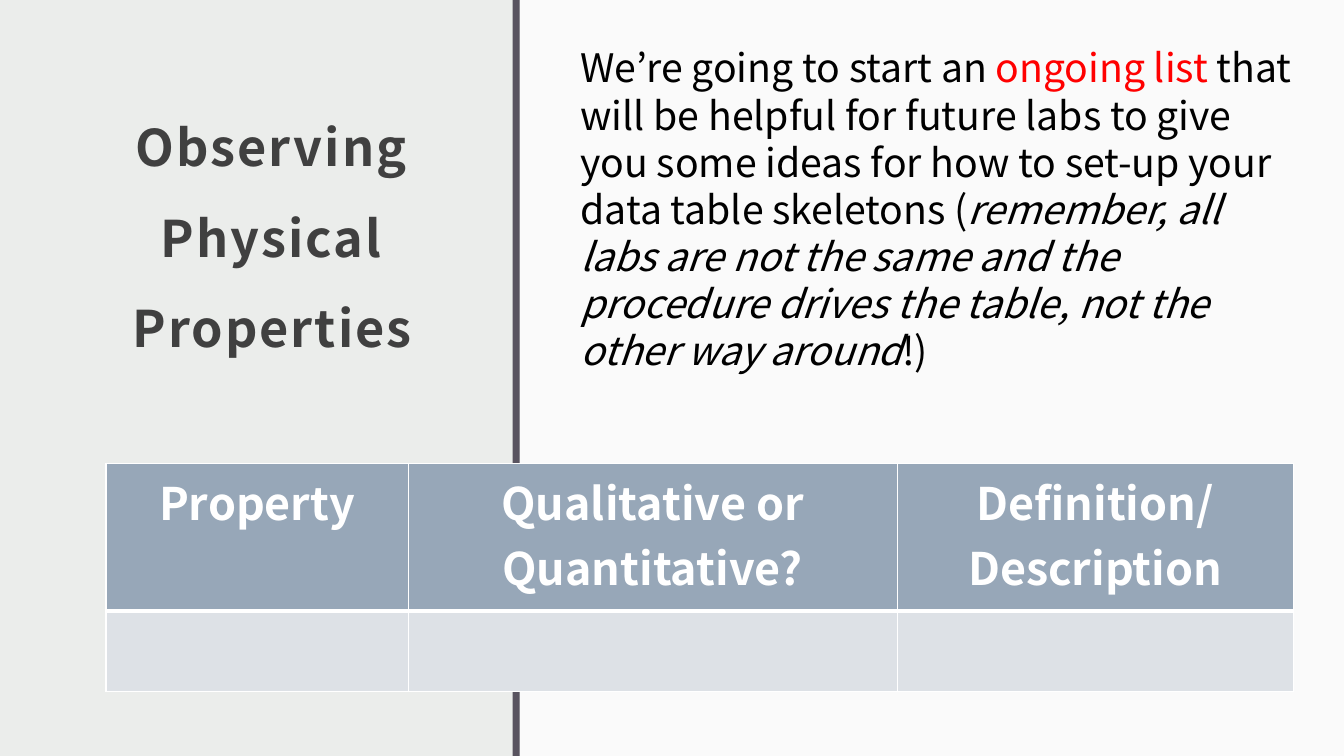
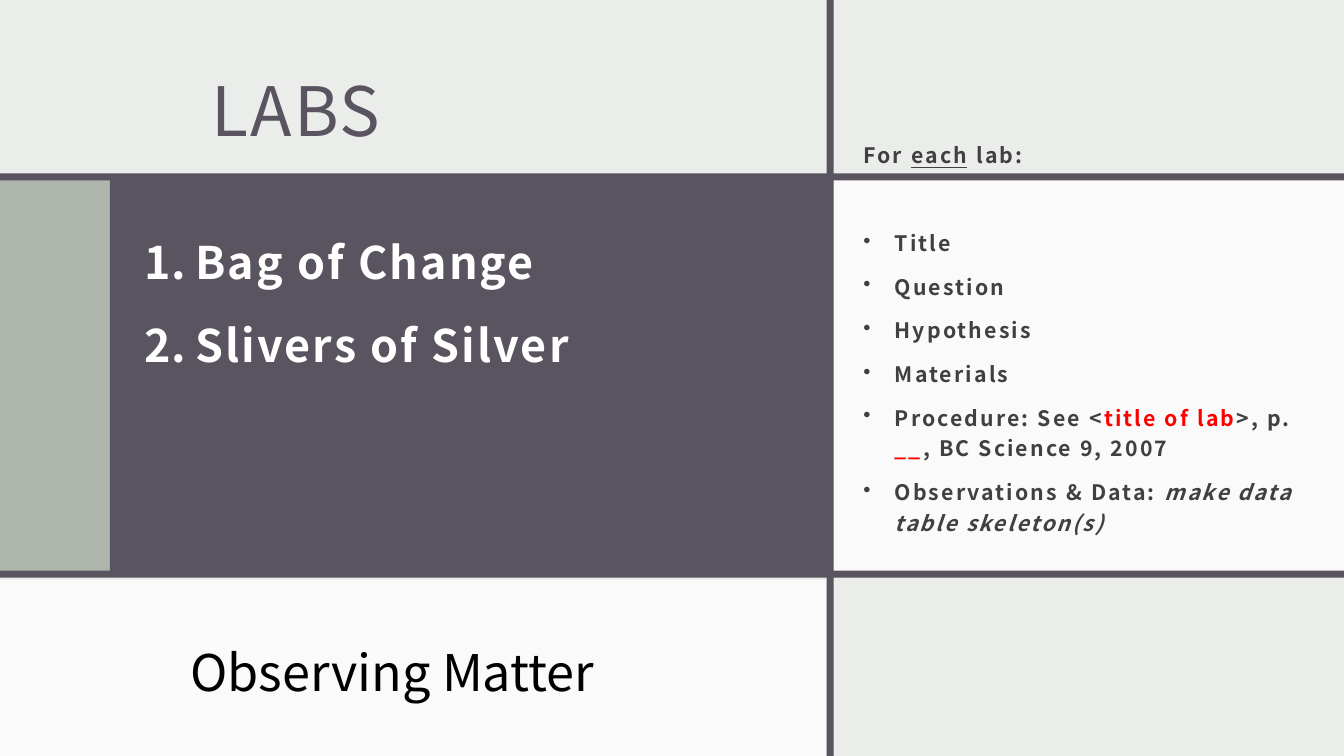
from lxml.etree import SubElement
from pptx import Presentation
from pptx.dml.color import RGBColor
from pptx.enum.shapes import MSO_SHAPE
from pptx.enum.text import MSO_ANCHOR, PP_ALIGN
from pptx.oxml.ns import qn
from pptx.util import Cm, Pt

COLORS = {
    "ground": "EBEDEB", "panel": "FAFAFA", "plum": "595460", "sage": "ADB5AD",
    "ink": "404040", "black": "000000", "white": "FFFFFF", "red": "FF0000",
    "header": "97A7B8", "row": "DDE1E6",
}
RGB = {name: RGBColor.from_string(value) for name, value in COLORS.items()}
FONT = "Noto Sans CJK JP"
WIDTH, HEIGHT, BAR = 33.87, 19.05, 0.18

# Text styles: "font" goes to each run, "paragraph" to each paragraph
STYLES = {
    "title": {"font": {"size": Pt(36), "bold": True}, "color": "ink", "spacing": 150,
              "paragraph": {"line_spacing": Pt(64.8), "alignment": PP_ALIGN.CENTER}},
    "heading": {"font": {"size": Pt(48.6)}, "color": "plum", "spacing": 150,
                "paragraph": {"line_spacing": Pt(72.9)}},
    "body": {"font": {"size": Pt(28)}, "color": "black",
             "paragraph": {"line_spacing": Pt(33.6)}},
    "topic": {"font": {"size": Pt(36)}, "color": "black",
              "paragraph": {"line_spacing": Pt(43.2)}},
    "labs": {"font": {"size": Pt(32), "bold": True}, "color": "white", "spacing": 150,
             "paragraph": {"line_spacing": Pt(50)}, "gap": 9.3, "indent": 1.27,
             "bullet": ("a:buAutoNum", {"type": "arabicPeriod"})},
    "steps": {"font": {"size": Pt(15.2), "bold": True}, "color": "ink", "spacing": 150,
              "paragraph": {"line_spacing": Pt(21.9)}, "gap": 9.3, "indent": 0.79,
              "bullet": ("a:buChar", {"char": "•"})},
    "table": {"font": {"size": Pt(32), "bold": True}, "color": "white",
              "paragraph": {"alignment": PP_ALIGN.CENTER}},
}
MARGINS = {"margin_left": Cm(0.3), "margin_top": Cm(0.3),
           "margin_right": Cm(0.3), "margin_bottom": Cm(0.25),
           "vertical_anchor": MSO_ANCHOR.MIDDLE}


def add_block(slide, color, left, top, width, height):
    block = slide.shapes.add_shape(
        MSO_SHAPE.RECTANGLE, Cm(left), Cm(top), Cm(width), Cm(height))
    block.shadow.inherit = False
    block.fill.solid()
    block.fill.fore_color.rgb = RGB[color]
    block.line.fill.background()


def write(frame, style_name, paragraphs, plain=0, first_gap=None, frame_format=None):
    """Fill a frame with lists of (text, changes); the first `plain` have no bullet."""
    style = STYLES[style_name]
    frame.word_wrap = True
    for key, value in (frame_format or {}).items():
        setattr(frame, key, value)
    for index, runs in enumerate(paragraphs):
        paragraph = frame.add_paragraph() if index else frame.paragraphs[0]
        for key, value in style["paragraph"].items():
            setattr(paragraph, key, value)
        if index and "gap" in style:
            wide = first_gap and index == plain
            paragraph.space_before = Pt(first_gap if wide else style["gap"])
        if "bullet" in style and index >= plain:
            properties = paragraph._p.get_or_add_pPr()
            indent = Cm(style["indent"])
            properties.set("marL", str(indent))
            properties.set("indent", str(-indent))
            tag, attributes = style["bullet"]
            SubElement(properties, qn(tag), attributes)
        for text, changes in runs:
            run = paragraph.add_run()
            run.text = text
            run.font.name = FONT
            run.font.color.rgb = RGB[changes.get("color", style["color"])]
            for key, value in {**style["font"], **changes.get("font", {})}.items():
                setattr(run.font, key, value)
            if "spacing" in style:
                run._r.get_or_add_rPr().set("spc", str(style["spacing"]))


ITALIC = {"font": {"italic": True}}
RED = {"color": "red"}

prs = Presentation()
prs.slide_width, prs.slide_height = Cm(WIDTH), Cm(HEIGHT)
properties_slide, labs_slide = [prs.slides.add_slide(prs.slide_layouts[6]) for _ in range(2)]
for slide in prs.slides:
    slide.background.fill.solid()
    slide.background.fill.fore_color.rgb = RGB["ground"]

# Panels and bars of both slides
for slide, color, *place in [
    (properties_slide, "panel", 13.11, 0, WIDTH - 13.11, HEIGHT),
    (properties_slide, "plum", 12.92, 0, BAR, HEIGHT),
    (labs_slide, "sage", 0, 4.5, 2.77, 9.93),
    (labs_slide, "plum", 2.77, 4.5, 18.19, 9.93),
    (labs_slide, "panel", 21.01, 4.47, WIDTH - 21.01, 10.01),
    (labs_slide, "panel", 0, 14.61, 20.83, HEIGHT - 14.61),
    (labs_slide, "plum", 0, 4.37, WIDTH, BAR),
    (labs_slide, "plum", 20.83, 0, BAR, HEIGHT),
    (labs_slide, "plum", 0, 14.38, WIDTH, BAR),
]:
    add_block(slide, color, *place)

# Texts: slide, place, style, paragraphs, extra options
texts = [
    (properties_slide, (2.13, 1.02, 9.47, 9.09), "title",
     [[("Observing Physical Properties", {})]], {"frame_format": MARGINS}),
    (properties_slide, (14.38, 0.98, 18.67, 8.64), "body",
     [[("We’re going to start an ", {}), ("ongoing list", RED),
       (" that will be helpful for future labs to give you some ideas for how to "
        "set-up your data table skeletons (", {}),
       ("remember, all labs are not the same and the procedure drives the table, "
        "not the other way around", ITALIC), ("!)", {})]], {}),
    (labs_slide, (5.03, 0.86, 7.26, 3.23), "heading",
     [[("LABS", {})]], {"frame_format": MARGINS}),
    (labs_slide, (4.55, 16.03, 18.44, 1.8), "topic", [[("Observing Matter", {})]], {}),
    (labs_slide, (3.4, 5.38, 17.75, 4.04), "labs",
     [[("Bag of Change", {})], [("Slivers of Silver", {})]], {}),
    (labs_slide, (21.46, 2.13, 12.19, 12.65), "steps",
     [[("For ", {}), ("each", {"font": {"underline": True}}), (" lab:", {})],
      *[[(step, {})] for step in ("Title", "Question", "Hypothesis", "Materials")],
      [("Procedure: See <", {}), ("title of lab", RED), (">, p. ", {}),
       ("__", RED), (", BC Science 9, 2007", {})],
      [("Observations & Data: ", {}), ("make data table skeleton(s)", ITALIC)]],
     {"plain": 1, "first_gap": 40.7, "frame_format": MARGINS}),
]
for slide, place, style_name, paragraphs, options in texts:
    box = slide.shapes.add_textbox(*[Cm(length) for length in place])
    write(box.text_frame, style_name, paragraphs, **options)

# Table of properties with one empty row
headers = [["Property"], ["Qualitative or Quantitative?"], ["Definition/", "Description"]]
column_widths, row_heights = [7.62, 12.32, 9.98], [3.71, 2.03]
property_table = properties_slide.shapes.add_table(
    len(row_heights), len(headers), Cm(2.67), Cm(11.68),
    Cm(sum(column_widths)), Cm(sum(row_heights))).table
for column, width in zip(property_table.columns, column_widths):
    column.width = Cm(width)
for row, height in zip(property_table.rows, row_heights):
    row.height = Cm(height)
for column, lines in enumerate(headers):
    write(property_table.cell(0, column).text_frame, "table",
          [[(line, {})] for line in lines])
    for row, (color, thick_side) in enumerate([("header", "lnB"), ("row", "lnT")]):
        cell = property_table.cell(row, column)
        cell_properties = cell._tc.get_or_add_tcPr()
        for side in ("lnL", "lnR", "lnT", "lnB"):
            border = SubElement(cell_properties, qn("a:" + side),
                                {"w": str(Pt(3 if side == thick_side else 1))})
            border_fill = SubElement(border, qn("a:solidFill"))
            SubElement(border_fill, qn("a:srgbClr"), {"val": COLORS["white"]})
        cell.fill.solid()
        cell.fill.fore_color.rgb = RGB[color]

prs.save("out.pptx")
